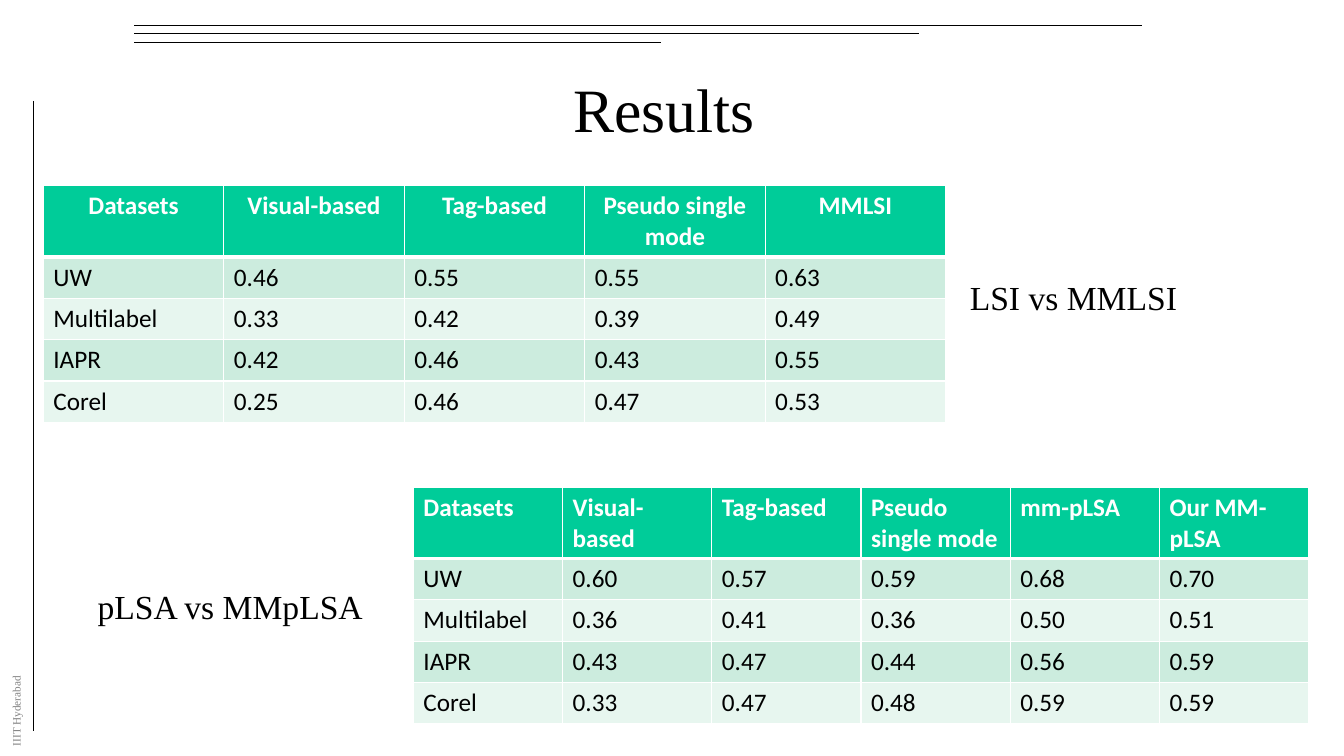
from lxml.etree import SubElement
from pptx import Presentation
from pptx.dml.color import RGBColor
from pptx.enum.shapes import MSO_CONNECTOR
from pptx.enum.text import MSO_ANCHOR, PP_ALIGN
from pptx.oxml.ns import qn
from pptx.util import Inches, Pt

BLACK = RGBColor(0x00, 0x00, 0x00)
WHITE = RGBColor(0xFF, 0xFF, 0xFF)
GREY = RGBColor(0x80, 0x80, 0x80)
GREEN = RGBColor(0x00, 0xCC, 0x99)
BAND_DARK = RGBColor(0xCC, 0xEC, 0xDE)
BAND_LIGHT = RGBColor(0xE7, 0xF6, 0xEF)


class ResultsSlide:
    serif = "Times New Roman"
    sans = "Calibri"

    def __init__(self, slide):
        self.shapes = slide.shapes

    def rule(self, x1, y1, x2, y2):
        rule = self.shapes.add_connector(
            MSO_CONNECTOR.STRAIGHT, Inches(x1), Inches(y1), Inches(x2), Inches(y2))
        rule.line.color.rgb = BLACK
        rule.line.width = Pt(0.75)
        SubElement(rule._element.spPr, qn("a:effectLst"))

    def add_words(self, paragraph, words, font, size, color, bold=False):
        run = paragraph.add_run()
        run.text = words
        run.font.name = font
        run.font.size = Pt(size)
        run.font.color.rgb = color
        run.font.bold = bold

    def label(self, x, y, width, height, words, size, color=BLACK,
              align=PP_ALIGN.LEFT, anchor=MSO_ANCHOR.TOP, wrap=False, rotation=0):
        box = self.shapes.add_textbox(Inches(x), Inches(y), Inches(width), Inches(height))
        box.rotation = rotation
        frame = box.text_frame
        frame.word_wrap = wrap
        frame.vertical_anchor = anchor
        paragraph = frame.paragraphs[0]
        paragraph.alignment = align
        self.add_words(paragraph, words, self.serif, size, color)

    def borders(self, cell, top, bottom):
        properties = cell._tc.get_or_add_tcPr()
        for side, width in (("L", 1), ("R", 1), ("T", top), ("B", bottom)):
            line = SubElement(properties, qn(f"a:ln{side}"), w=str(Pt(width)))
            fill = SubElement(line, qn("a:solidFill"))
            SubElement(fill, qn("a:srgbClr"), val=str(WHITE))

    def table(self, x, y, column_width, header_height, row_height, rows, header_align):
        columns = len(rows[0])
        height = header_height + row_height * (len(rows) - 1)
        table = self.shapes.add_table(
            len(rows), columns, Inches(x), Inches(y),
            Inches(column_width * columns), Inches(height)).table
        table.first_row = False
        table.horz_banding = False
        for column in table.columns:
            column.width = Inches(column_width)
        for index, values in enumerate(rows):
            header = index == 0
            table.rows[index].height = Inches(header_height if header else row_height)
            band = GREEN if header else BAND_DARK if index % 2 else BAND_LIGHT
            for cell, value in zip(table.rows[index].cells, values):
                self.borders(cell, 3 if index == 1 else 1, 3 if header else 1)
                cell.fill.solid()
                cell.fill.fore_color.rgb = band
                paragraph = cell.text_frame.paragraphs[0]
                paragraph.alignment = header_align if header else PP_ALIGN.LEFT
                self.add_words(paragraph, value, self.sans, 18,
                               WHITE if header else BLACK, header)


LSI_RESULTS = [
    ("Datasets", "Visual-based", "Tag-based", "Pseudo single mode", "MMLSI"),
    ("UW", "0.46", "0.55", "0.55", "0.63"),
    ("Multilabel", "0.33", "0.42", "0.39", "0.49"),
    ("IAPR", "0.42", "0.46", "0.43", "0.55"),
    ("Corel", "0.25", "0.46", "0.47", "0.53"),
]
PLSA_RESULTS = [
    ("Datasets", "Visual-based", "Tag-based", "Pseudo single mode", "mm-pLSA", "Our MM-pLSA"),
    ("UW", "0.60", "0.57", "0.59", "0.68", "0.70"),
    ("Multilabel", "0.36", "0.41", "0.36", "0.50", "0.51"),
    ("IAPR", "0.43", "0.47", "0.44", "0.56", "0.59"),
    ("Corel", "0.33", "0.47", "0.48", "0.59", "0.59"),
]


def main():
    presentation = Presentation()
    presentation.slide_width = Inches(13.33)
    presentation.slide_height = Inches(7.5)
    results = ResultsSlide(presentation.slides.add_slide(presentation.slide_layouts[6]))

    for y, right in ((0.25, 11.33), (0.33, 9.11), (0.42, 6.56)):
        results.rule(1.33, y, right, y)
    results.rule(0.33, 1, 0.33, 7.25)
    results.label(-0.3, 6.92, 0.92, 0.24, "IIIT Hyderabad", 8, GREY,
                  anchor=MSO_ANCHOR.MIDDLE, rotation=270)
    results.label(1, 0.52, 11.32, 1.1, "Results ", 44, align=PP_ALIGN.CENTER,
                  anchor=MSO_ANCHOR.MIDDLE, wrap=True)
    results.table(0.43, 1.84, 1.79, 0.71, 0.41, LSI_RESULTS, PP_ALIGN.CENTER)
    results.table(4.1, 4.84, 1.48, 0.7, 0.41, PLSA_RESULTS, PP_ALIGN.LEFT)
    results.label(9.52, 2.7, 2.28, 0.51, "LSI vs MMLSI", 24)
    results.label(0.87, 5.76, 2.86, 0.5, "pLSA vs MMpLSA", 24)

    presentation.save("out.pptx")


if __name__ == "__main__":
    main()
